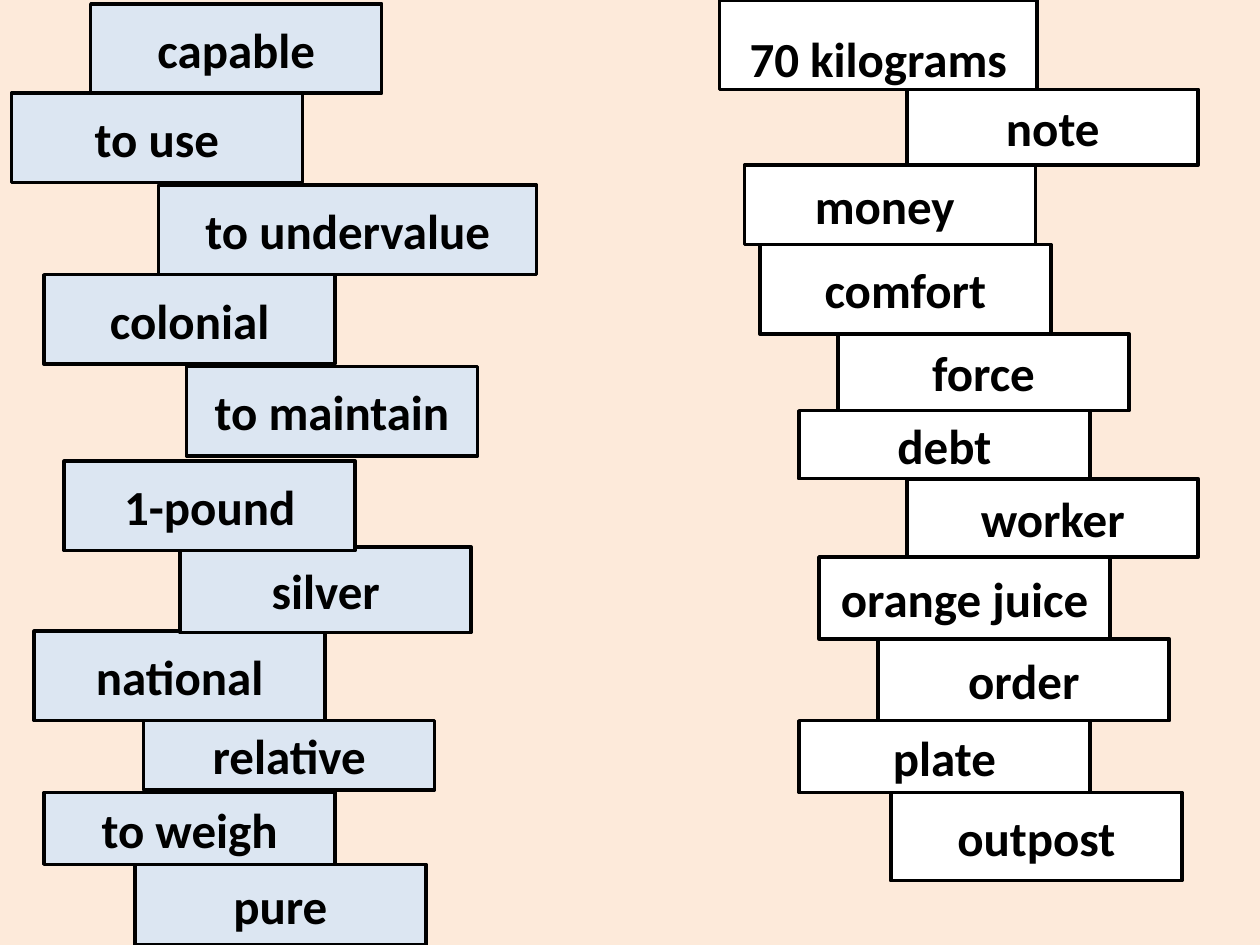
from dataclasses import dataclass

from pptx import Presentation
from pptx.dml.color import RGBColor
from pptx.enum.shapes import MSO_SHAPE
from pptx.enum.text import MSO_ANCHOR, PP_ALIGN
from pptx.util import Pt

RECT = MSO_SHAPE.RECTANGLE
MIDDLE = MSO_ANCHOR.MIDDLE
CENTER = PP_ALIGN.CENTER

BACKGROUND = "FDEADA"
BLUE = "DCE6F2"
WHITE = "FFFFFF"
BLACK = "000000"


@dataclass
class Card:
    text: str
    left: float
    height: float = 51.12
    width: float = 166.32
    gap: float = 0  # distance below the previous card, negative to overlap
    drop: float = 0  # extra inset above the text


LEFT_CARDS = [
    Card("capable", 51.84, gap=2.16),
    Card("to use", 6.48),
    Card("to undervalue", 90.72, width=216, gap=1.44),
    Card("colonial", 25.2),
    Card("to maintain", 106.56, gap=1.44),
    Card("1-pound", 36.72, gap=2.88),
    Card("silver", 102.96, 48.96, gap=-2.16),
    Card("national", 19.44, gap=-0.72),
    Card("relative", 82.08, 39.6),
    Card("to weigh", 25.2, 41.04, gap=1.44),
    Card("pure", 77.04, 46.08),
]

RIGHT_CARDS = [
    Card("70 kilograms", 411.12, width=181.44, drop=15),
    Card("note", 518.4, 43.2),
    Card("money ", 425.52, 45.36),
    Card("comfort", 434.16),
    Card("force", 478.8, 43.92),
    Card("debt", 456.48, 38.88),
    Card("worker", 518.4, 44.64),
    Card("orange juice", 468, 46.8),
    Card("order", 501.84, 46.8),
    Card("plate", 456.48, 41.04),
    Card("outpost", 509.04, 50.4),
]


def color(value: str) -> RGBColor:
    return RGBColor.from_string(value)


def draw_card(s, card: Card, top: float, fill: str) -> None:
    sp = s.shapes.add_shape(RECT, Pt(card.left), Pt(top), Pt(card.width), Pt(card.height))
    sp.shadow.inherit = False
    sp.fill.solid()
    sp.fill.fore_color.rgb = color(fill)
    sp.line.color.rgb = color(BLACK)
    sp.line.width = Pt(2)

    tf = sp.text_frame
    tf.vertical_anchor = MIDDLE
    if card.drop:
        tf.margin_top = Pt(card.drop)
        tf.margin_bottom = 0
    p = tf.paragraphs[0]
    p.alignment = CENTER
    r = p.add_run()
    r.text = card.text
    r.font.name = "Calibri"
    r.font.size = Pt(28)
    r.font.bold = True
    r.font.color.rgb = color(BLACK)


def draw_column(s, cards: list[Card], fill: str) -> None:
    placed = []
    bottom = 0.0
    for card in cards:
        top = bottom + card.gap
        placed.append((card, top))
        bottom = top + card.height
    # Upper cards lie over lower ones
    for card, top in reversed(placed):
        draw_card(s, card, top, fill)


def main() -> None:
    prs = Presentation()
    prs.slide_width, prs.slide_height = Pt(720), Pt(540)
    s = prs.slides.add_slide(prs.slide_layouts[6])

    # Background
    s.background.fill.solid()
    s.background.fill.fore_color.rgb = color(BACKGROUND)

    # Two columns of word cards to match
    draw_column(s, LEFT_CARDS, BLUE)
    draw_column(s, RIGHT_CARDS, WHITE)

    prs.save("out.pptx")


if __name__ == "__main__":
    main()
